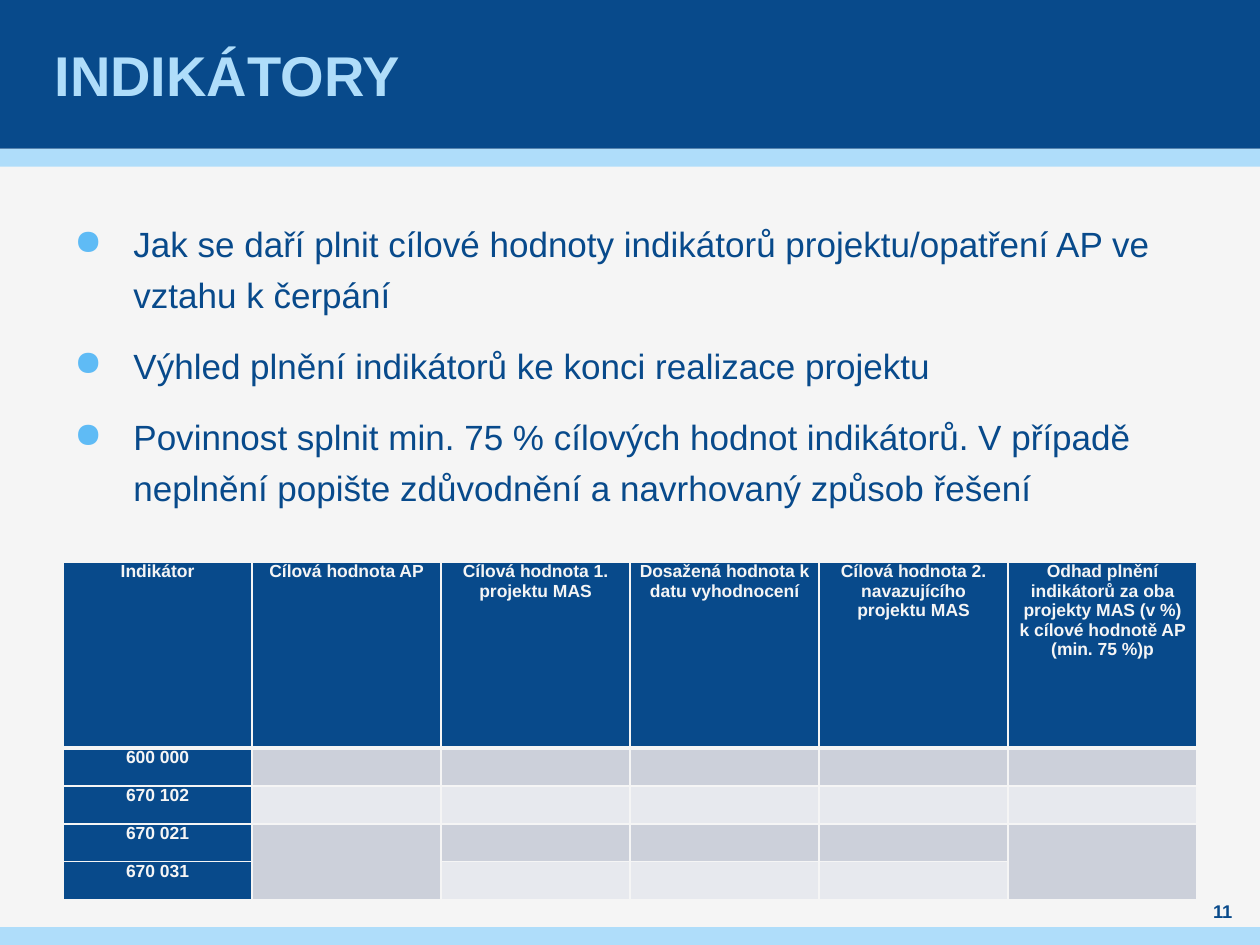
from lxml.etree import SubElement
from pptx import Presentation
from pptx.dml.color import RGBColor
from pptx.enum.shapes import MSO_SHAPE
from pptx.enum.text import MSO_ANCHOR, PP_ALIGN
from pptx.oxml.ns import qn
from pptx.util import Cm, Pt

COLORS = {
    "navy": "084A8B",
    "sky": "AFDDFA",
    "bullet": "5FBBF5",
    "paper": "F5F5F5",
    "dark_band": "CCD0DA",
    "light_band": "E7E9EE",
}
BULLETS = [
    "Jak se daří plnit cílové hodnoty indikátorů projektu/opatření AP ve vztahu k čerpání",
    "Výhled plnění indikátorů ke konci realizace projektu",
    "Povinnost splnit min. 75 % cílových hodnot indikátorů. "
    "V případě neplnění popište zdůvodnění a navrhovaný způsob řešení",
]
HEADERS = [
    "Indikátor",
    "Cílová hodnota AP",
    "Cílová hodnota 1. projektu MAS",
    "Dosažená hodnota k datu vyhodnocení",
    "Cílová hodnota 2. navazujícího projektu MAS",
    "Odhad plnění indikátorů za oba projekty MAS (v %) k cílové hodnotě AP (min. 75 %)p",
]
INDICATORS = ["600 000", "670 102", "670 021", "670 031"]


def rgb(name):
    return RGBColor.from_string(COLORS[name])


class Deck:
    font = "Arial"

    def __init__(self, prs):
        self.s = prs.slides.add_slide(prs.slide_layouts[6])
        fill = self.s.background.fill
        fill.solid()
        fill.fore_color.rgb = rgb("paper")

    def run(self, p, text, size, color, bold=False):
        r = p.add_run()
        r.text = text
        r.font.name = self.font
        r.font.size = Pt(size)
        r.font.bold = bold
        r.font.color.rgb = rgb(color)

    def band(self, top, height, color):
        sp = self.s.shapes.add_shape(MSO_SHAPE.RECTANGLE, 0, Cm(top), Cm(25.4), Cm(height))
        sp.shadow.inherit = False
        sp.fill.solid()
        sp.fill.fore_color.rgb = rgb(color)
        sp.line.fill.background()

    def frame(self, left, top, width, height, inset=0, anchor=MSO_ANCHOR.MIDDLE):
        sp = self.s.shapes.add_textbox(Cm(left), Cm(top), Cm(width), Cm(height))
        tf = sp.text_frame
        tf.word_wrap = True
        tf.vertical_anchor = anchor
        tf.margin_left = tf.margin_right = Cm(inset)
        tf.margin_top = tf.margin_bottom = 0
        return tf

    def label(self, text, box, size, color, align, inset=0):
        p = self.frame(*box, inset=inset).paragraphs[0]
        p.alignment = align
        self.run(p, text, size, color, bold=True)

    def bullets(self, items, box):
        tf = self.frame(*box, anchor=MSO_ANCHOR.TOP)
        for i, item in enumerate(items):
            p = tf.add_paragraph() if i else tf.paragraphs[0]
            p.line_spacing = Pt(28.8)
            p.space_before = p.space_after = Pt(6)
            pPr = p._p.get_or_add_pPr()
            pPr.set("marL", str(Cm(1.19)))
            pPr.set("indent", str(Cm(-1.19)))
            clr = SubElement(pPr, qn("a:buClr"))
            SubElement(clr, qn("a:srgbClr"), val=COLORS["bullet"])
            SubElement(pPr, qn("a:buChar"), char="●")
            self.run(p, item, 20, "navy")

    def borders(self, cell, widths):
        tcPr = cell._tc.get_or_add_tcPr()
        for side, width in widths.items():
            ln = SubElement(tcPr, qn("a:ln" + side), w=str(Pt(width)))
            fill = SubElement(ln, qn("a:solidFill"))
            SubElement(fill, qn("a:srgbClr"), val=COLORS["paper"])

    def cell(self, cell, text, color, top=1, bottom=1):
        cell.margin_left = cell.margin_right = Cm(0.18)
        cell.margin_top = cell.margin_bottom = 0
        self.borders(cell, {"L": 1, "R": 1, "T": top, "B": bottom})
        cell.fill.solid()
        cell.fill.fore_color.rgb = rgb(color)
        if text:
            p = cell.text_frame.paragraphs[0]
            p.alignment = PP_ALIGN.CENTER
            p.space_after = Pt(1.8)
            self.run(p, text, 10, "paper", bold=True)

    def table(self, headers, names, left, top, col, head, row, merged):
        n, m = len(names) + 1, len(headers)
        size = Cm(col * m), Cm(head + row * (n - 1))
        t = self.s.shapes.add_table(n, m, Cm(left), Cm(top), *size).table
        for c in t.columns:
            c.width = Cm(col)
        for i, r in enumerate(t.rows):
            r.height = Cm(row if i else head)
        for j, text in enumerate(headers):
            self.cell(t.cell(0, j), text, "navy", bottom=3)
        for i, name in enumerate(names, 1):
            edge = 3 if i == 1 else 1
            self.cell(t.cell(i, 0), name, "navy", top=edge)
            for j in range(1, m):
                self.cell(t.cell(i, j), "", "dark_band" if i % 2 else "light_band", top=edge)
        for j in merged:
            t.cell(n - 2, j).merge(t.cell(n - 1, j))


def main():
    prs = Presentation()
    prs.slide_width, prs.slide_height = Cm(25.4), Cm(19.05)
    d = Deck(prs)
    d.band(3, 0.36, "sky")
    d.band(0, 3, "navy")
    d.band(18.69, 0.36, "sky")
    d.label("INDIKÁTORY", (1, 0, 23.4, 3), 32, "sky", PP_ALIGN.LEFT, inset=0.1)
    d.bullets(BULLETS, (1.5, 4.32, 22.4, 6))
    d.table(HEADERS, INDICATORS, left=1.27, top=11.33, col=3.81, head=3.75, row=0.75, merged=(1, 5))
    d.label("11", (24, 18.11, 1.3, 0.5), 10.5, "navy", PP_ALIGN.CENTER)
    prs.save("out.pptx")


if __name__ == "__main__":
    main()
